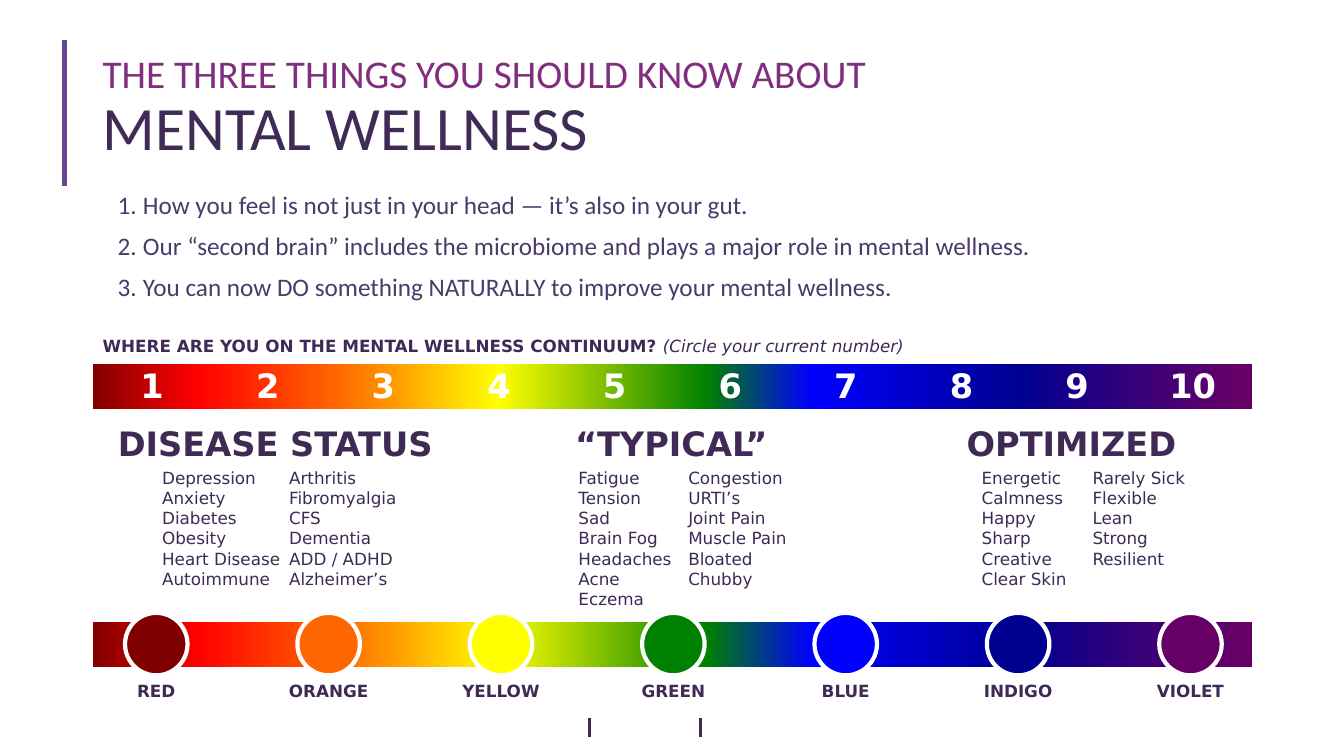
import pptx
import pptx.dml.color
import pptx.enum.shapes
import pptx.enum.text
import pptx.oxml
import pptx.oxml.ns
import pptx.util
from lxml import etree

CELL = 0.1
PLUM = "3F2A56"
SANS = "DejaVu Sans"
HEADING = "Calibri"
CENTER = pptx.enum.text.PP_ALIGN.CENTER
LEFT = pptx.enum.text.PP_ALIGN.LEFT

SPECTRUM = [(0, "800000"), (9, "FF0000"), (21, "FF6600"), (35, "FFFF00"),
            (53, "008000"), (62, "0000FF"), (80, "000090"), (99, "660066")]
COLOR_STOPS = [("RED", "800000"), ("ORANGE", "FF6600"), ("YELLOW", "FFFF00"),
               ("GREEN", "008000"), ("BLUE", "0000FF"), ("INDIGO", "000090"),
               ("VIOLET", "660066")]
STATUSES = [("DISEASE STATUS", 6.3), ("“TYPICAL”", 45.6), ("OPTIMIZED", 85.3)]
SYMPTOMS = [
    (15.1, 13.9, ["Depression", "Anxiety", "Diabetes", "Obesity",
                  "Heart Disease", "Autoimmune"]),
    (27.7, 13, ["Arthritis", "Fibromyalgia", "CFS", "Dementia",
                "ADD / ADHD", "Alzheimer’s"]),
    (56.4, 11.8, ["Fatigue", "Tension", "Sad", "Brain Fog", "Headaches",
                  "Acne", "Eczema"]),
    (67.3, 13, ["Congestion", "URTI’s", "Joint Pain", "Muscle Pain",
                "Bloated", "Chubby"]),
    (96.4, 11, ["Energetic", "Calmness", "Happy", "Sharp", "Creative",
                "Clear Skin"]),
    (107.4, 11.7, ["Rarely Sick", "Flexible", "Lean", "Strong", "Resilient"]),
]
THINGS = [
    "How you feel is not just in your head — it’s also in your gut.",
    "Our “second brain” includes the microbiome and plays a major role in mental wellness.",
    "You can now DO something NATURALLY to improve your mental wellness.",
]


def cells(count):
    return pptx.util.Inches(count * CELL)


def color(value):
    return pptx.dml.color.RGBColor.from_string(value)


def add_span(para, text, size, shade=PLUM, font=SANS, bold=False, italic=False):
    span = para.add_run()
    span.text = text
    span.font.name = font
    span.font.size = pptx.util.Pt(size)
    span.font.bold = bold
    span.font.italic = italic
    span.font.color.rgb = color(shade)


def add_box(page, column, row, width, height, grow=True):
    box = page.shapes.add_textbox(*map(cells, (column, row, width, height)))
    frame = box.text_frame
    frame.word_wrap = True
    if grow:
        frame.auto_size = pptx.enum.text.MSO_AUTO_SIZE.SHAPE_TO_FIT_TEXT
    return frame


def add_lines(page, column, row, width, height, lines, size=12, align=LEFT, **style):
    frame = add_box(page, column, row, width, height)
    for index, line in enumerate(lines):
        para = frame.add_paragraph() if index else frame.paragraphs[0]
        para.alignment = align
        add_span(para, line, size, **style)


def add_rule(page, column, top, bottom, shade, weight):
    rule = page.shapes.add_connector(
        pptx.enum.shapes.MSO_CONNECTOR.STRAIGHT,
        *map(cells, (column, top, column, bottom)))
    rule.line.color.rgb = color(shade)
    rule.line.width = pptx.util.Pt(weight)
    etree.SubElement(rule._element.spPr, pptx.oxml.ns.qn("a:effectLst"))


def add_spectrum(page, row):
    band = page.shapes.add_shape(pptx.enum.shapes.MSO_SHAPE.RECTANGLE,
                                 *map(cells, (9.2, row, 115, 4.5)))
    band.shadow.inherit = False
    band.line.fill.background()
    band.fill.gradient()
    band.fill.gradient_angle = 0
    stop_list = band._element.spPr.find(".//" + pptx.oxml.ns.qn("a:gsLst"))
    for stop in list(stop_list):
        stop_list.remove(stop)
    for percent, shade in SPECTRUM:
        stop = etree.SubElement(stop_list, pptx.oxml.ns.qn("a:gs"), pos=str(percent * 1000))
        etree.SubElement(stop, pptx.oxml.ns.qn("a:srgbClr"), val=shade)


def add_dot(page, column, row, shade):
    dot = page.shapes.add_shape(pptx.enum.shapes.MSO_SHAPE.OVAL,
                                *map(cells, (column, row, 6.2, 6.2)))
    dot.shadow.inherit = False
    dot.fill.solid()
    dot.fill.fore_color.rgb = color(shade)
    dot.line.color.rgb = color("FFFFFF")
    dot.line.width = pptx.util.Pt(3)


def add_title(page):
    frame = add_box(page, 9.2, 5.5, 115, 14.5, grow=False)
    frame.vertical_anchor = pptx.enum.text.MSO_ANCHOR.MIDDLE
    frame.margin_top = 0
    frame.margin_bottom = cells(3.9)
    para = frame.paragraphs[0]
    para.line_spacing = 0.9
    add_span(para, "THE THREE THINGS YOU SHOULD KNOW ABOUT", 28, "822E7F", HEADING)
    para.add_line_break()
    add_span(para, "MENTAL WELLNESS", 44, "402B56", HEADING)


def add_numbered_list(page, column, row, width, height, items):
    frame = add_box(page, column, row, width, height, grow=False)
    for index, item in enumerate(items):
        para = frame.add_paragraph() if index else frame.paragraphs[0]
        para.line_spacing = 0.9
        para.space_before = pptx.util.Pt(10)
        add_span(para, item, 18, "4A3B6B", HEADING)
        properties = para._p.get_or_add_pPr()
        properties.set("marL", str(cells(2.5)))
        properties.set("indent", str(-cells(2.5)))
        etree.SubElement(properties, pptx.oxml.ns.qn("a:buAutoNum"), type="arabicPeriod")


def add_question(page):
    para = add_box(page, 9.2, 32.8, 115, 3).paragraphs[0]
    add_span(para, "WHERE ARE YOU ON THE MENTAL WELLNESS CONTINUUM? ", 12, bold=True)
    add_span(para, "(Circle your current number)", 12, italic=True)


def main():
    deck = pptx.Presentation()
    deck.slide_width = cells(133.33)
    deck.slide_height = cells(75)
    page = deck.slides.add_slide(deck.slide_layouts[6])

    add_rule(page, 6.4, 4, 18.5, "68478D", 3)
    for column in (69.5, 58.5):
        add_rule(page, column, 71.2, 73.1, PLUM, 0)

    add_title(page)
    add_numbered_list(page, 10.7, 18.6, 124.3 - 1.7, 12.2, THINGS)
    add_question(page)

    add_spectrum(page, 36.1)
    for index in range(10):
        add_lines(page, 11.6 + 11.47 * index, 35.7, 7, 5, [str(index + 1)],
                  24, CENTER, shade="FFFFFF", bold=True)

    for status, column in STATUSES:
        add_lines(page, column, 41.5, 42, 5, [status], 24, CENTER, bold=True)
    for column, width, names in SYMPTOMS:
        add_lines(page, column, 45.9, width, 1.1 + 2 * len(names), names)

    add_spectrum(page, 61.7)
    for index, (name, shade) in enumerate(COLOR_STOPS):
        column = 12.4 + 17.1 * index
        add_dot(page, column, 60.8, shade)
        add_lines(page, column - 2.45, 67, 11.1, 3, [name], 12, CENTER, bold=True)

    deck.save("out.pptx")


if __name__ == "__main__":
    main()
